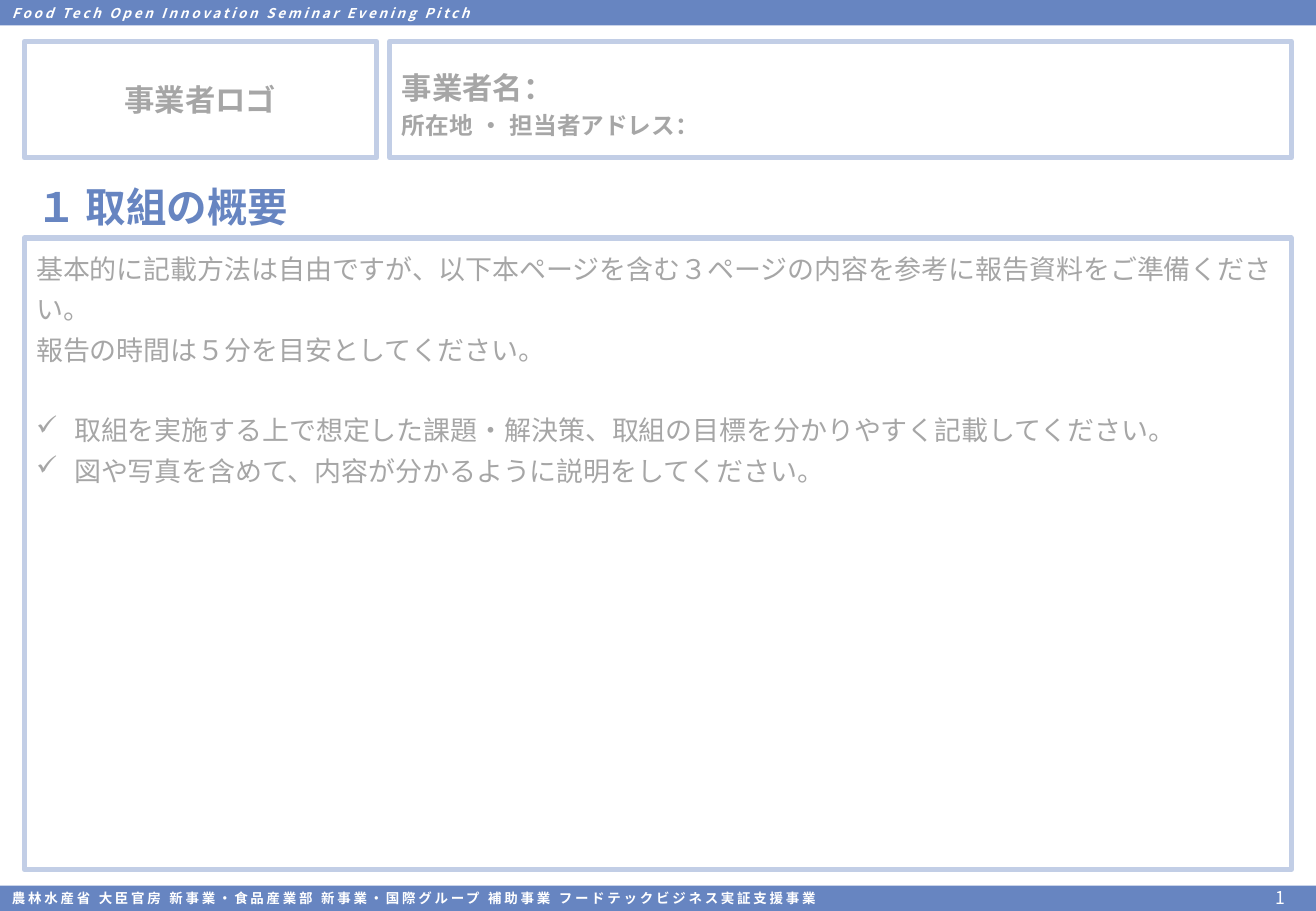
from dataclasses import dataclass

from lxml.etree import SubElement
from pptx import Presentation
from pptx.dml.color import RGBColor
from pptx.enum.shapes import MSO_SHAPE
from pptx.enum.text import MSO_ANCHOR, PP_ALIGN
from pptx.oxml.ns import qn
from pptx.util import Pt


@dataclass(frozen=True)
class Theme:
    blue: str = "6785C1"
    pale_blue: str = "C2CEE6"
    grey: str = "A6A6A6"
    white: str = "FFFFFF"
    body_font: str = "Arial"
    heading_font: str = "Noto Sans CJK JP"
    bar_size: float = 8
    number_size: float = 10.5
    contact_size: float = 14
    body_size: float = 16
    label_size: float = 18
    heading_size: float = 24


THEME = Theme()
WIDTH, HEIGHT = 780, 540
BAR_HEIGHT = 15.1
LEFT, FULL_WIDTH = 14.4, 751
NAME_LEFT, NAME_WIDTH = 231.1, 534.3
LOGO_WIDTH = 208.8
HEADER_TOP, HEADER_HEIGHT = 24.5, 69.1
CONTENT_TOP, CONTENT_HEIGHT = 141.1, 374.4
BULLET_INDENT = 22.5

GREY_TEXT = {"font": THEME.body_font, "color": THEME.grey}
BODY = GREY_TEXT | {"size": THEME.body_size}
LABEL = GREY_TEXT | {"size": THEME.label_size, "bold": True}
BAR = {"font": THEME.heading_font, "color": THEME.white,
       "size": THEME.bar_size, "bold": True, "spacing": 1.6}
NUMBER = {"font": THEME.heading_font, "color": THEME.white, "size": THEME.number_size}
HEADING = {"font": THEME.heading_font, "color": THEME.blue,
           "size": THEME.heading_size, "bold": True}


def add_rectangle(slide, box, fill=None, line=None):
    shape = slide.shapes.add_shape(MSO_SHAPE.RECTANGLE, *map(Pt, box))
    shape.shadow.inherit = False
    if fill:
        shape.fill.solid()
        shape.fill.fore_color.rgb = RGBColor.from_string(fill)
    else:
        shape.fill.background()
    if line:
        shape.line.color.rgb = RGBColor.from_string(line)
        shape.line.width = Pt(3)
    else:
        shape.line.fill.background()
    return shape


def format_run(run, style):
    values = {"name": style["font"], "size": Pt(style["size"]),
              "bold": style.get("bold", False), "italic": style.get("italic", False)}
    for name, value in values.items():
        setattr(run.font, name, value)
    run.font.color.rgb = RGBColor.from_string(style["color"])
    properties = run.font._element
    SubElement(properties, qn("a:ea")).set("typeface", style["font"])
    if "spacing" in style:
        properties.set("spc", str(round(style["spacing"] * 100)))


def add_bullet(paragraph, character):
    properties = paragraph._p.get_or_add_pPr()
    properties.set("marL", str(Pt(BULLET_INDENT)))
    properties.set("indent", str(-Pt(BULLET_INDENT)))
    SubElement(properties, qn("a:buChar")).set("char", character)


def write_paragraphs(shape, paragraphs, frame_format=None, **paragraph_format):
    """Each paragraph is a text, its run style and optional settings."""
    frame = shape.text_frame
    frame.word_wrap = True
    for name, value in (frame_format or {}).items():
        setattr(frame, name, value)
    for index, (text, style, *extra) in enumerate(paragraphs):
        paragraph = frame.paragraphs[0] if index == 0 else frame.add_paragraph()
        settings = {"alignment": PP_ALIGN.LEFT} | paragraph_format
        settings |= extra[0] if extra else {}
        bullet = settings.pop("bullet", None)
        for name, value in settings.items():
            setattr(paragraph, name, value)
        if bullet:
            add_bullet(paragraph, bullet)
        run = paragraph.add_run()
        run.text = text
        format_run(run, style)


def add_text(slide, box, paragraphs, frame_format=None, **paragraph_format):
    shape = slide.shapes.add_textbox(*map(Pt, box))
    write_paragraphs(shape, paragraphs, frame_format, **paragraph_format)


def add_bar(slide, top, text, **style):
    bar = add_rectangle(slide, (0, top, WIDTH, BAR_HEIGHT), fill=THEME.blue)
    write_paragraphs(bar, [(text, BAR | style)], {"vertical_anchor": MSO_ANCHOR.MIDDLE})


def main():
    presentation = Presentation()
    presentation.slide_width, presentation.slide_height = Pt(WIDTH), Pt(HEIGHT)
    slide = presentation.slides.add_slide(presentation.slide_layouts[6])

    # Header and footer bars
    add_bar(slide, 0, "Food Tech Open Innovation Seminar Evening Pitch", italic=True)
    add_bar(slide, HEIGHT - BAR_HEIGHT,
            "農林水産省 大臣官房 新事業・食品産業部 新事業・国際グループ 補助事業 "
            "フードテックビジネス実証支援事業")
    add_text(slide, (737.3, 525.6, 43.2, 13), [("1", NUMBER)],
             {"margin_top": 0, "margin_bottom": 0}, alignment=PP_ALIGN.CENTER)

    # Frames
    for box in ((LEFT, HEADER_TOP, LOGO_WIDTH, HEADER_HEIGHT),
                (NAME_LEFT, HEADER_TOP, NAME_WIDTH, HEADER_HEIGHT),
                (LEFT, CONTENT_TOP, FULL_WIDTH, CONTENT_HEIGHT)):
        add_rectangle(slide, box, line=THEME.pale_blue)

    # Company details
    add_text(slide, (LEFT, 44.6, LOGO_WIDTH, 28.8), [("事業者ロゴ", LABEL)],
             alignment=PP_ALIGN.CENTER)
    add_text(slide, (NAME_LEFT, 33.1, NAME_WIDTH, 51.8),
             [("事業者名：", LABEL),
              ("所在地 ・ 担当者アドレス：", LABEL | {"size": THEME.contact_size})],
             line_spacing=1.2)

    # Section heading
    add_text(slide, (LEFT, 104.4, 737.3, 36.7), [("１ 取組の概要", HEADING)],
             {"vertical_anchor": MSO_ANCHOR.MIDDLE, "margin_top": Pt(8.6)},
             line_spacing=0.8)

    # Instructions
    check = {"bullet": "✓"}
    add_text(slide, (LEFT, CONTENT_TOP, FULL_WIDTH, 126),
             [("基本的に記載方法は自由ですが、以下本ページを含む３ページの内容を"
               "参考に報告資料をご準備ください。", BODY),
              ("報告の時間は５分を目安としてください。", BODY),
              ("取組を実施する上で想定した課題・解決策、取組の目標を分かりやすく"
               "記載してください。", BODY, check | {"space_before": Pt(24)}),
              ("図や写真を含めて、内容が分かるように説明をしてください。", BODY, check)],
             line_spacing=1.25)

    presentation.save("out.pptx")


if __name__ == "__main__":
    main()
